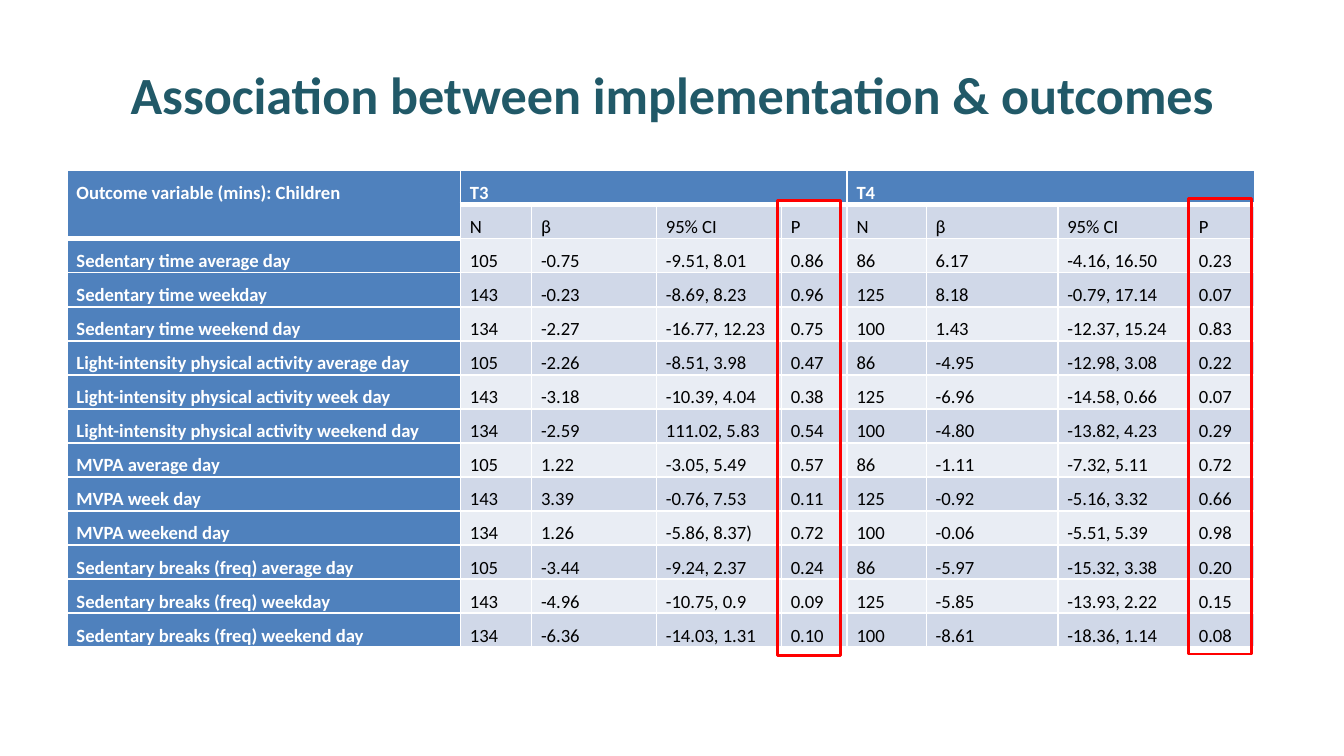
import dataclasses

import lxml.etree
import pptx
import pptx.dml.color
import pptx.enum.shapes
import pptx.enum.text
import pptx.oxml.ns
import pptx.util

Inches = pptx.util.Inches
Pt = pptx.util.Pt
Color = pptx.dml.color.RGBColor.from_string


@dataclasses.dataclass
class Theme:
    face: str = "Calibri"
    title: str = "215968"
    head: str = "4F81BD"
    bands: tuple = ("E9EDF4", "D0D8E8")
    light: str = "FFFFFF"
    dark: str = "000000"
    mark: str = "FF0000"
    title_size: float = 28
    cell_size: float = 10
    thin: float = 1
    thick: float = 3
    mark_line: float = 1.5


TITLE = "Association between implementation & outcomes"
WIDTHS = [2.93, 0.53, 0.93, 0.93, 0.49, 0.59, 0.98, 0.98, 0.49]
HEADS = ["N", "β", "95% CI", "P"]
COUNTS = [("105", "86"), ("143", "125"), ("134", "100")]
# Outcome, then β, 95% CI and P at T3 and at T4
RESULTS = [
    "Sedentary time average day|-0.75|-9.51, 8.01|0.86|6.17|-4.16, 16.50|0.23",
    "Sedentary time weekday|-0.23|-8.69, 8.23|0.96|8.18|-0.79, 17.14|0.07",
    "Sedentary time weekend day|-2.27|-16.77, 12.23|0.75|1.43|-12.37, 15.24|0.83",
    "Light-intensity physical activity average day|-2.26|-8.51, 3.98|0.47|-4.95|-12.98, 3.08|0.22",
    "Light-intensity physical activity week day|-3.18|-10.39, 4.04|0.38|-6.96|-14.58, 0.66|0.07",
    "Light-intensity physical activity weekend day|-2.59|111.02, 5.83|0.54|-4.80|-13.82, 4.23|0.29",
    "MVPA average day|1.22|-3.05, 5.49|0.57|-1.11|-7.32, 5.11|0.72",
    "MVPA week day|3.39|-0.76, 7.53|0.11|-0.92|-5.16, 3.32|0.66",
    "MVPA weekend day|1.26|-5.86, 8.37)|0.72|-0.06|-5.51, 5.39|0.98",
    "Sedentary breaks (freq) average day|-3.44|-9.24, 2.37|0.24|-5.97|-15.32, 3.38|0.20",
    "Sedentary breaks (freq) weekday|-4.96|-10.75, 0.9|0.09|-5.85|-13.93, 2.22|0.15",
    "Sedentary breaks (freq) weekend day|-6.36|-14.03, 1.31|0.10|-8.61|-18.36, 1.14|0.08",
]


def table_rows():
    rows = [
        ["Outcome variable (mins): Children", "T3", "", "", "", "T4", "", "", ""],
        ["", *HEADS, *HEADS],
    ]
    for i, line in enumerate(RESULTS):
        name, *values = line.split("|")
        early, late = COUNTS[i % len(COUNTS)]
        rows.append([name, early, *values[:3], late, *values[3:]])
    return rows


def is_thick(row, col):
    """Tell whether the line under this cell closes a heading."""
    return row == 0 or (row == 1 and col == 0)


class Page:
    def __init__(self, slide, theme):
        self.slide = slide
        self.theme = theme

    def set_font(self, para, size, color, bold):
        font = para.font
        font.name = self.theme.face
        font.size = Pt(size)
        font.bold = bold
        font.color.rgb = Color(color)

    def title(self, text, left, top, width, height):
        shape = self.slide.shapes.title
        shape.left, shape.top = Inches(left), Inches(top)
        shape.width, shape.height = Inches(width), Inches(height)
        frame = shape.text_frame
        frame.text = text
        frame.word_wrap = True
        frame.auto_size = pptx.enum.text.MSO_AUTO_SIZE.NONE
        frame.vertical_anchor = pptx.enum.text.MSO_ANCHOR.MIDDLE
        para = frame.paragraphs[0]
        para.alignment = pptx.enum.text.PP_ALIGN.CENTER
        self.set_font(para, self.theme.title_size, self.theme.title, True)

    def borders(self, cell, row, col):
        look = self.theme
        top = look.thick if row and is_thick(row - 1, col) else look.thin
        base = look.thick if is_thick(row, col) else look.thin
        sides = {"lnL": look.thin, "lnR": look.thin, "lnT": top, "lnB": base}
        qn = pptx.oxml.ns.qn
        props = cell._tc.get_or_add_tcPr()
        for i, (side, width) in enumerate(sides.items()):
            line = lxml.etree.Element(qn("a:" + side), w=str(Pt(width)))
            fill = lxml.etree.SubElement(line, qn("a:solidFill"))
            lxml.etree.SubElement(fill, qn("a:srgbClr"), val=look.light)
            props.insert(i, line)

    def cell(self, cell, text, row, col):
        look = self.theme
        head = row == 0 or col == 0
        cell.text = text
        cell.margin_left = cell.margin_right = Inches(0.07)
        cell.margin_top = cell.margin_bottom = 0
        cell.fill.solid()
        cell.fill.fore_color.rgb = Color(look.head if head else look.bands[row % 2])
        para = cell.text_frame.paragraphs[0]
        para.line_spacing = 1.5
        self.set_font(para, look.cell_size, look.light if head else look.dark, head)
        self.borders(cell, row, col)

    def table(self, rows, widths, left, top, height):
        frame = self.slide.shapes.add_table(
            len(rows), len(widths), Inches(left), Inches(top),
            Inches(sum(widths)), Inches(height))
        table = frame.table
        for col, width in zip(table.columns, widths):
            col.width = Inches(width)
        for r, row in enumerate(rows):
            for c, text in enumerate(row):
                self.cell(table.cell(r, c), text, r, c)
        return table

    def outline(self, left, top, width, height):
        box = self.slide.shapes.add_shape(
            pptx.enum.shapes.MSO_SHAPE.RECTANGLE,
            Inches(left), Inches(top), Inches(width), Inches(height))
        box.shadow.inherit = False
        box.fill.background()
        box.line.color.rgb = Color(self.theme.mark)
        box.line.width = Pt(self.theme.mark_line)


def main():
    deck = pptx.Presentation()
    deck.slide_width, deck.slide_height = Inches(10.01), Inches(5.63)
    page = Page(deck.slides.add_slide(deck.slide_layouts[5]), Theme())
    page.title(TITLE, 0.5, 0.23, 9.01, 0.94)

    table = page.table(table_rows(), WIDTHS, 0.5, 1.27, 3.55)
    table.cell(0, 0).merge(table.cell(1, 0))
    for first in (1, 5):
        table.cell(0, first).merge(table.cell(0, first + len(HEADS) - 1))

    for left, top in ((5.79, 1.49), (8.85, 1.48)):
        page.outline(left, top, 0.47, 3.39)
    deck.save("out.pptx")


if __name__ == "__main__":
    main()
